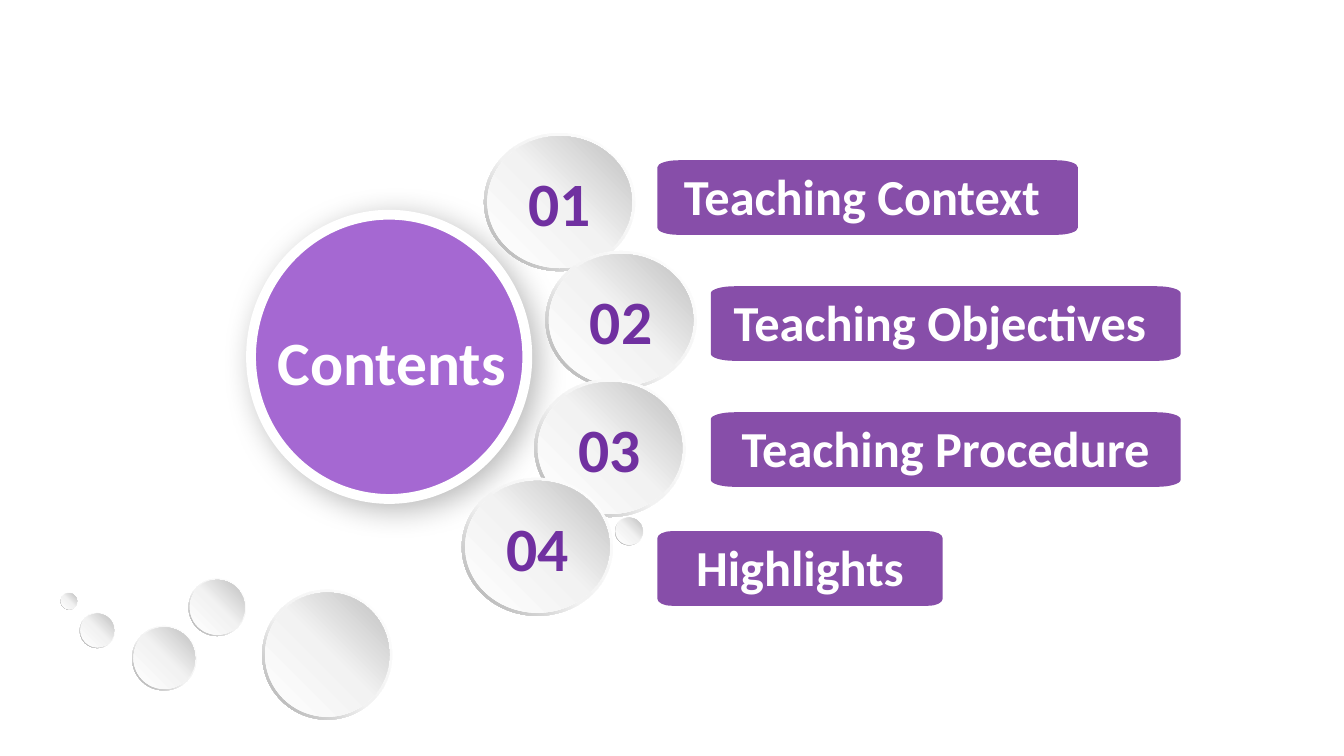
from lxml.etree import SubElement
from pptx import Presentation
from pptx.dml.color import RGBColor
from pptx.enum.shapes import MSO_SHAPE
from pptx.enum.text import MSO_ANCHOR, PP_ALIGN
from pptx.oxml.ns import qn
from pptx.util import Inches, Pt

COLORS = {
    "disc": "A568D2", "bar": "874EA9", "number": "7030A0", "white": "FFFFFF",
    "pale": "F2F2F2", "rim": "A6A6A6", "face": "BFBFBF", "shadow": "000000",
}
FONT = "Calibri"
SLIDE_SIZE = (13.33, 7.5)

TITLE = "Contents"
DISC = (2.49, 2.13, 2.74, 2.82)
TITLE_BOX = (2.67, 3.17, 2.43, 0.82)

# left, top, diameter
BUBBLES = [
    (1.31, 6.21, 0.64), (6.1, 5.13, 0.28), (2.6, 5.85, 1.29),
    (1.87, 5.74, 0.57), (0.79, 6.08, 0.35), (0.6, 5.88, 0.17),
]

# label, left and top of the numbered bubble, left, top and width of the bar
TOPICS = [
    ("Teaching Context ", (4.8, 1.32), (6.52, 1.59, 4.17)),
    ("Teaching Objectives ", (5.41, 2.49), (7.05, 2.84, 4.66)),
    ("Teaching Procedure", (5.3, 3.76), (7.05, 4.09, 4.66)),
    ("Highlights", (4.58, 4.74), (6.52, 5.27, 2.83)),
]
NUMBER_SIZE = (1.5, 1.37)
BAR_HEIGHT = 0.74
CORNER_HEIGHT = 0.07
CORNER_SHARE = 0.05  # corner width as a share of the bar width
CURVE = 0.55  # reach of the handles of a quarter ellipse

RIM_SHARE = 0.049
FACE_SCALE = 0.955
RIM_GRADIENT = ([(0, "white"), (55, "pale"), (100, "rim")], 135)
FACE_GRADIENT = ([(0, "white"), (51, "pale"), (100, "face")], 315)


def rgb(name):
    return RGBColor.from_string(COLORS[name])


def write(shape, text, size, color, anchor=MSO_ANCHOR.MIDDLE):
    frame = shape.text_frame
    frame.vertical_anchor = anchor
    paragraph = frame.paragraphs[0]
    paragraph.alignment = PP_ALIGN.CENTER
    run = paragraph.add_run()
    run.text = text
    run.font.name = FONT
    run.font.size = Pt(size)
    run.font.bold = True
    run.font.color.rgb = rgb(color)


def fill_plain(shape, color):
    shape.shadow.inherit = False
    shape.fill.solid()
    shape.fill.fore_color.rgb = rgb(color)
    shape.line.fill.background()


def fill_gradient(shape, gradient):
    """Fill with several stops (percent, colour) along a clockwise angle."""
    stops, angle = gradient
    shape.fill.gradient()
    fill = shape._element.spPr.find(qn("a:gradFill"))
    for child in list(fill):
        fill.remove(child)
    stop_list = SubElement(fill, qn("a:gsLst"))
    for percent, color in stops:
        stop = SubElement(stop_list, qn("a:gs"), pos=str(percent * 1000))
        SubElement(stop, qn("a:srgbClr"), val=COLORS[color])
    SubElement(fill, qn("a:lin"), ang=str(angle * 60000), scaled="0")


def add_backdrop(slide):
    backdrop = slide.shapes.add_shape(MSO_SHAPE.RECTANGLE, 0, 0, *map(Inches, SLIDE_SIZE))
    fill_plain(backdrop, "white")
    color = backdrop._element.spPr.find(qn("a:solidFill")).find(qn("a:srgbClr"))
    SubElement(color, qn("a:alpha"), val="59000")


def add_round(slide, kind, box, gradient):
    shape = slide.shapes.add_shape(kind, *map(Inches, box))
    shape.shadow.inherit = False
    fill_gradient(shape, gradient)
    shape.line.fill.background()
    return shape


def add_bubble(slide, left, top, width, height):
    """Draw a shaded rim with a face centred in it, and return the face."""
    rim = add_round(slide, MSO_SHAPE.DONUT, (left, top, width, height), RIM_GRADIENT)
    rim.adjustments[0] = RIM_SHARE
    margin = (1 - FACE_SCALE) / 2
    face_box = (left + width * margin, top + height * margin,
                width * FACE_SCALE, height * FACE_SCALE)
    return add_round(slide, MSO_SHAPE.OVAL, face_box, FACE_GRADIENT)


def round_corners(shape):
    """Turn every second line, which cuts a corner, into a quarter ellipse."""
    segments = list(shape._element.iter(qn("a:moveTo"), qn("a:lnTo")))
    ends = [(int(segment[0].get("x")), int(segment[0].get("y"))) for segment in segments]
    for index in range(2, len(segments), 2):
        (x1, y1), (x2, y2) = ends[index - 1], ends[index]
        # the line before a right or left corner is horizontal in turn
        corner_x, corner_y = (x2, y1) if index % 4 == 2 else (x1, y2)
        handles = [(round(x + CURVE * (corner_x - x)), round(y + CURVE * (corner_y - y)))
                   for x, y in ((x1, y1), (x2, y2))]
        segment = segments[index]
        segment.tag = qn("a:cubicBezTo")
        segment.remove(segment[0])
        for x, y in [*handles, (x2, y2)]:
            SubElement(segment, qn("a:pt"), x=str(x), y=str(y))


def add_bar(slide, left, top, width):
    right, bottom = left + width, top + BAR_HEIGHT
    x_near, x_far = left + width * CORNER_SHARE, right - width * CORNER_SHARE
    y_near, y_far = top + CORNER_HEIGHT, bottom - CORNER_HEIGHT
    outline = [(x_near, top), (x_far, top), (right, y_near), (right, y_far),
               (x_far, bottom), (x_near, bottom), (left, y_far), (left, y_near),
               (x_near, top)]
    points = [(Inches(x), Inches(y)) for x, y in outline]
    builder = slide.shapes.build_freeform(*points[0])
    builder.add_line_segments(points[1:], close=True)
    bar = builder.convert_to_shape()
    round_corners(bar)
    fill_plain(bar, "bar")
    return bar


def add_disc(slide):
    disc = slide.shapes.add_shape(MSO_SHAPE.OVAL, *map(Inches, DISC))
    fill_plain(disc, "disc")
    disc.line.color.rgb = rgb("white")
    disc.line.width = Pt(7)
    effects = disc._element.spPr.find(qn("a:effectLst"))
    shadow = SubElement(effects, qn("a:outerShdw"), blurRad=str(Pt(22)),
                        dist=str(Pt(6)), dir=str(45 * 60000), rotWithShape="0")
    color = SubElement(shadow, qn("a:srgbClr"), val=COLORS["shadow"])
    SubElement(color, qn("a:alpha"), val="28000")

    title = slide.shapes.add_shape(MSO_SHAPE.RECTANGLE, *map(Inches, TITLE_BOX))
    fill_plain(title, "disc")
    frame = title.text_frame
    frame.word_wrap = True
    frame.margin_left = frame.margin_right = Inches(0.04)
    frame.margin_top = frame.margin_bottom = Inches(0.04)
    write(title, TITLE, 44, "white", MSO_ANCHOR.TOP)


def main():
    presentation = Presentation()
    presentation.slide_width, presentation.slide_height = map(Inches, SLIDE_SIZE)
    slide = presentation.slides.add_slide(presentation.slide_layouts[6])

    add_backdrop(slide)
    add_disc(slide)
    for left, top, diameter in BUBBLES:
        add_bubble(slide, left, top, diameter, diameter)
    for number, (label, corner, bar_box) in enumerate(TOPICS, start=1):
        face = add_bubble(slide, *corner, *NUMBER_SIZE)
        write(face, f"{number:02d}", 44, "number")
        write(add_bar(slide, *bar_box), label, 36, "white", MSO_ANCHOR.TOP)

    presentation.save("out.pptx")


if __name__ == "__main__":
    main()
